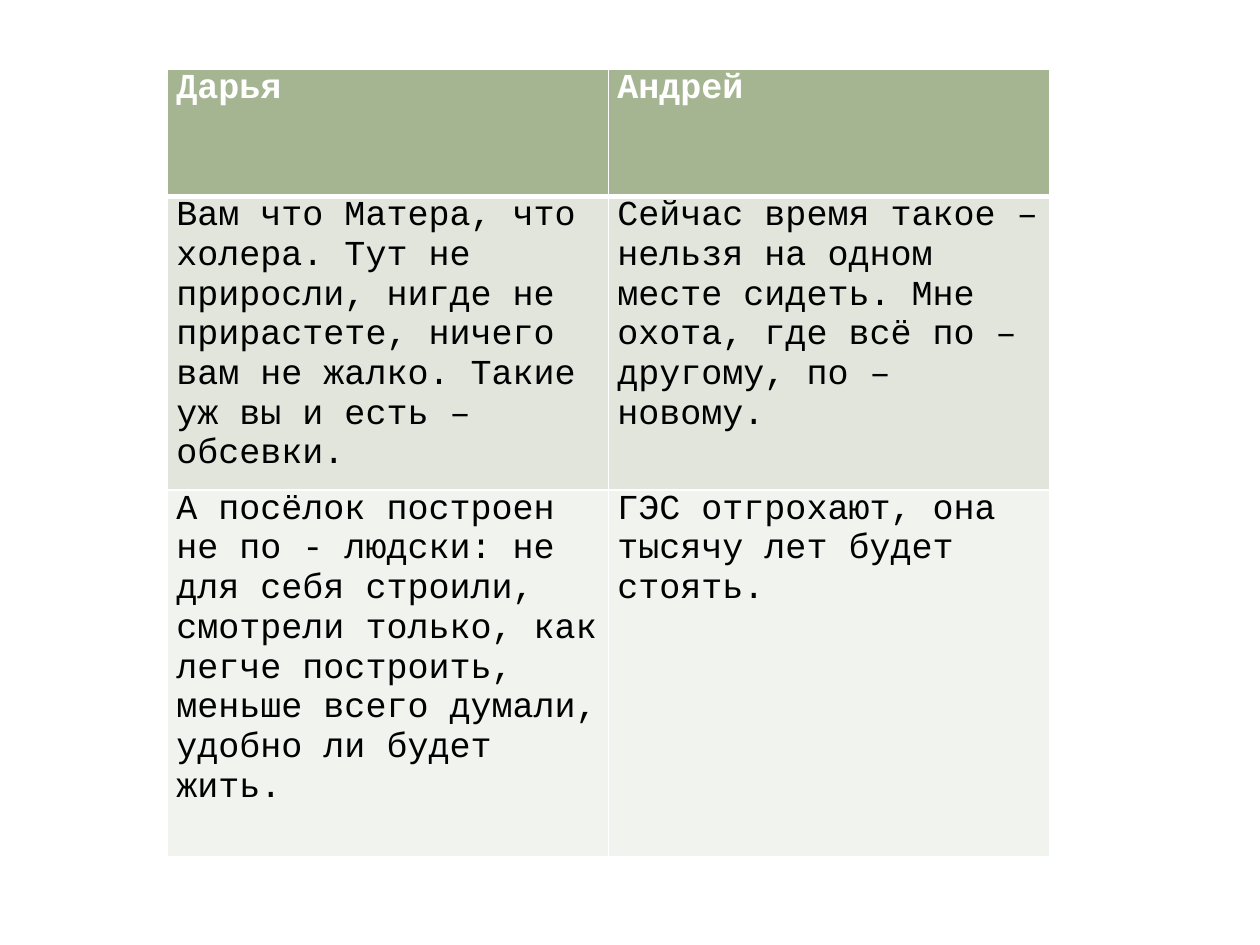
from lxml import etree
from pptx import Presentation
from pptx import util as u
from pptx.dml.color import RGBColor
from pptx.oxml import ns

WHITE = RGBColor(0xFF, 0xFF, 0xFF)
BLACK = RGBColor(0, 0, 0)
SAGE = RGBColor(0xA5, 0xB5, 0x92)
PALE_SAGE = RGBColor(0xE1, 0xE5, 0xDC)
LIGHT_SAGE = RGBColor(0xF0, 0xF3, 0xEE)


def write_text(cell, words, *, color, bold=False, size=20, font="Courier New"):
    span = cell.text_frame.paragraphs[0].add_run()
    span.text = words
    span.font.name = font
    span.font.size = u.Pt(size)
    span.font.bold = bold
    span.font.color.rgb = color


def add_border(cell, side, width):
    properties = cell._tc.get_or_add_tcPr()
    line = etree.SubElement(properties, ns.qn(f"a:{side}"), w=str(u.Pt(width)))
    fill = etree.SubElement(line, ns.qn("a:solidFill"))
    etree.SubElement(fill, ns.qn("a:srgbClr"), val=str(WHITE))


rows = [
    (1.01, SAGE, ["Дарья", "Андрей"]),
    (2.33, PALE_SAGE, [
        "Вам что Матера, что холера. Тут не приросли, нигде не прирастете, "
        "ничего вам не жалко. Такие уж вы и есть – обсевки.",
        "Сейчас время такое – нельзя на одном месте сидеть. Мне охота, "
        "где всё по – другому, по – новому.",
    ]),
    (2.91, LIGHT_SAGE, [
        "А посёлок построен не по - людски: не для себя строили, смотрели "
        "только, как легче построить, меньше всего думали, удобно ли будет жить.",
        "ГЭС отгрохают, она тысячу лет будет стоять.",
    ]),
]

deck = Presentation()
deck.slide_width = u.Inches(10)
deck.slide_height = u.Inches(7.5)
page = deck.slides.add_slide(deck.slide_layouts[6])

table = page.shapes.add_table(
    len(rows), 2, u.Inches(1.33), u.Inches(0.55), u.Inches(7), u.Inches(6.25)
).table
for column in table.columns:
    column.width = u.Inches(3.5)

for row_index, (height, color, quotes) in enumerate(rows):
    table.rows[row_index].height = u.Inches(height)
    header = row_index == 0
    for column_index, quote in enumerate(quotes):
        cell = table.cell(row_index, column_index)
        cell.margin_left = cell.margin_right = u.Inches(0.07)
        cell.margin_top = cell.margin_bottom = 0
        add_border(cell, "lnL", 1)
        add_border(cell, "lnR", 1)
        add_border(cell, "lnT", 3 if row_index == 1 else 1)
        add_border(cell, "lnB", 3 if header else 1)
        cell.fill.solid()
        cell.fill.fore_color.rgb = color
        write_text(cell, quote, color=WHITE if header else BLACK, bold=header)

deck.save("out.pptx")
